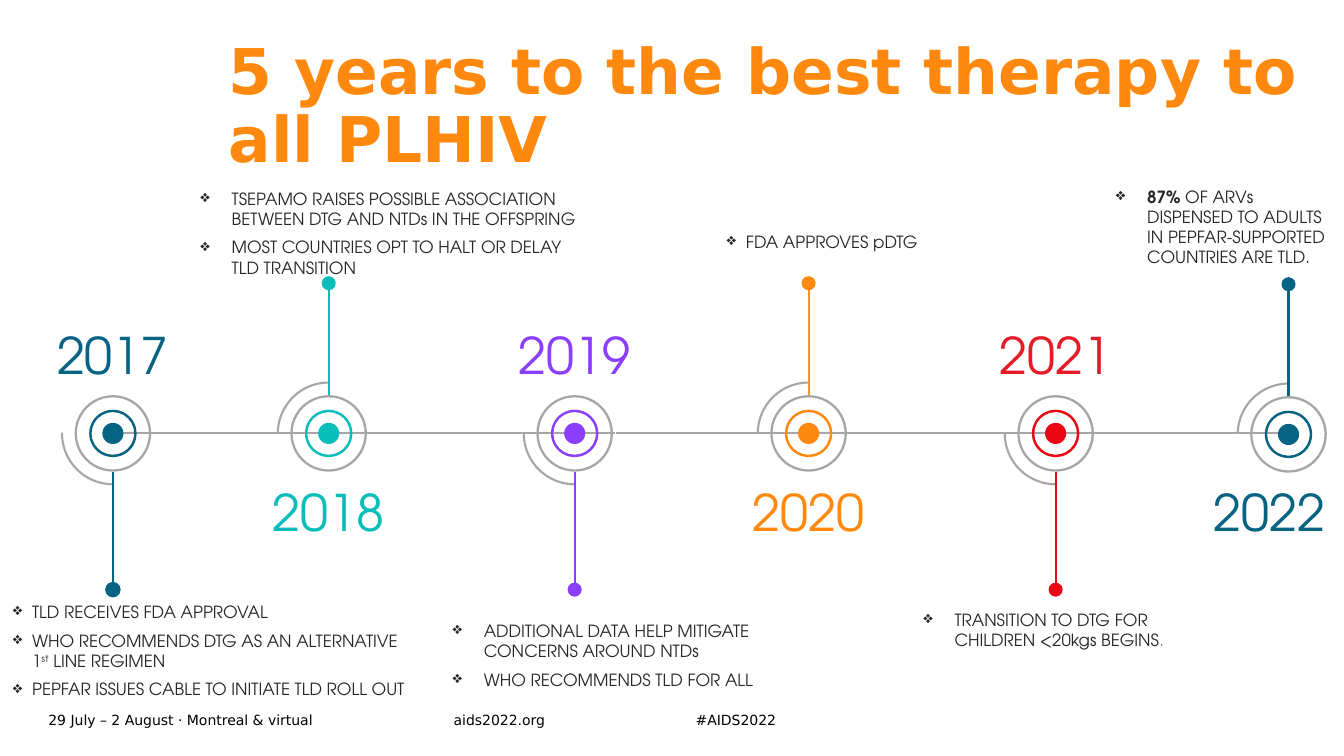
from dataclasses import dataclass
from typing import Optional

from lxml import etree
from pptx import Presentation
from pptx import util as u
from pptx.dml.color import RGBColor
from pptx.enum import shapes as sh, text as tx
from pptx.oxml.ns import qn

NAVY = RGBColor(0x07, 0x63, 0x82)
TEAL = RGBColor(0x08, 0xBD, 0xBA)
VIOLET = RGBColor(0x8A, 0x3F, 0xFC)
ORANGE = RGBColor(0xFF, 0x89, 0x0E)
AMBER = RGBColor(0xF7, 0x92, 0x28)
RED = RGBColor(0xEB, 0x06, 0x14)
CRIMSON = RGBColor(0xE7, 0x06, 0x13)
ROSE = RGBColor(0xE5, 0x1C, 0x28)
GREY = RGBColor(0xA6, 0xA6, 0xA6)
MID = RGBColor(0x80, 0x80, 0x80)
INK = RGBColor(0x26, 0x26, 0x26)
BLACK = RGBColor(0, 0, 0)
SANS = "DejaVu Sans"
GEO = "TeX Gyre Adventor"
AXIS = 4.3


@dataclass
class Part:
    text: str
    bold: Optional[bool] = None
    color: Optional[RGBColor] = None
    raised: bool = False


@dataclass
class Note:
    box: tuple[float, float, float, float]
    indent: float
    items: list[list[Part]]


@dataclass
class Stop:
    year: str
    x: float
    up: bool
    hue: RGBColor
    note: Note
    stem: Optional[RGBColor] = None
    label: Optional[RGBColor] = None
    mid: Optional[float] = None
    drop: float = 0
    edge: float = 0


STOPS = [
    Stop("2017", 1.12, False, NAVY, Note((0.03, 5.92, 4.12, 1.08), 0.19, [
        [Part("TLD RECEIVES FDA APPROVAL")],
        [Part("WHO RECOMMENDS DTG AS AN ALTERNATIVE 1"),
         Part("st", raised=True), Part(" LINE REGIMEN")],
        [Part("PEPFAR ISSUES CABLE TO INITIATE TLD ROLL OUT")]]), edge=1),
    Stop("2018", 3.26, True, TEAL, Note((1.89, 1.82, 4.04, 0.99), 0.31, [
        [Part("TSEPAMO RAISES POSSIBLE ASSOCIATION BETWEEN DTG AND NTDs "
              "IN THE OFFSPRING")],
        [Part("MOST COUNTRIES OPT TO HALT OR DELAY TLD TRANSITION")]])),
    Stop("2019", 5.7, False, VIOLET, Note((4.39, 6.11, 3.38, 0.79), 0.31, [
        [Part("ADDITIONAL DATA HELP MITIGATE CONCERNS AROUND NTDs")],
        [Part("WHO RECOMMENDS TLD FOR ALL")]])),
    Stop("2020", 8.02, True, ORANGE, Note((7.11, 2.25, 2.13, 0.3), 0.19, [
        [Part("FDA APPROVES pDTG")]]), stem=AMBER),
    Stop("2021", 10.47, False, RED, Note((9.06, 6, 2.94, 0.5), 0.31, [
        [Part("TRANSITION TO DTG FOR CHILDREN <20kgs BEGINS"),
         Part(".", color=MID)]]), stem=CRIMSON, label=ROSE),
    Stop("2022", 12.78, True, NAVY, Note((10.97, 1.8, 2.32, 0.91), 0.31, [
        [Part("87% ", bold=True),
         Part("OF ARVs DISPENSED TO ADULTS IN PEPFAR-SUPPORTED "
              "COUNTRIES ARE TLD.")]]), mid=12.59, drop=0.01),
]
SPANS = [(10.4, 12.87), (6.11, 8.57), (8.56, 11.02), (3.63, 6.1), (1.17, 3.63)]
FOOTS = [("29 July – 2 August · Montreal & virtual", 0.48, 4.02),
         ("aids2022.org", 4.5, 1.93), ("#AIDS2022", 6.9, 1.93)]


def style(para, face: str, size: float, color: RGBColor) -> None:
    para.font.name = face
    para.font.size = u.Pt(size)
    para.font.color.rgb = color


def strip(frame) -> None:
    frame.margin_left = frame.margin_right = 0
    frame.margin_top = frame.margin_bottom = 0


def frame(slide, x: float, y: float, w: float, h: float):
    box = slide.shapes.add_textbox(*map(u.Inches, (x, y, w, h)))
    box.text_frame.word_wrap = True
    return box.text_frame


def rule(slide, x1: float, y1: float, x2: float, y2: float,
         color: RGBColor) -> None:
    line = slide.shapes.add_connector(
        sh.MSO_CONNECTOR.STRAIGHT, *map(u.Inches, (x1, y1, x2, y2)))
    line.line.color.rgb = color
    line.line.width = u.Pt(1.5)
    etree.SubElement(line._element.spPr, qn("a:effectLst"))


def round_at(slide, kind, x: float, y: float, size: float,
             fill: Optional[RGBColor], adjust: tuple[float, ...] = (),
             line: Optional[RGBColor] = None, width: float = 0):
    part = slide.shapes.add_shape(kind, u.Inches(x - size / 2),
                                  u.Inches(y - size / 2),
                                  u.Inches(size), u.Inches(size))
    part.shadow.inherit = False
    for i, value in enumerate(adjust):
        part.adjustments[i] = value
    if fill is None:
        part.fill.background()
    else:
        part.fill.solid()
        part.fill.fore_color.rgb = fill
    if width:
        part.line.color.rgb = line
        part.line.width = u.Pt(width)
    else:
        part.line.fill.background()
    return part


def draw_note(slide, note: Note) -> None:
    body = frame(slide, *note.box)
    body.auto_size = tx.MSO_AUTO_SIZE.SHAPE_TO_FIT_TEXT
    for i, parts in enumerate(note.items):
        para = body.add_paragraph() if i else body.paragraphs[0]
        props = para._p.get_or_add_pPr()
        props.set("marL", str(u.Inches(note.indent)))
        props.set("indent", str(-u.Inches(note.indent)))
        etree.SubElement(props, qn("a:buChar")).set("char", "❖")
        if i:
            para.space_before = u.Pt(6)
        style(para, GEO, 12, INK)
        for part in parts:
            run = para.add_run()
            run.text = part.text
            if part.bold:
                run.font.bold = True
            if part.color is not None:
                run.font.color.rgb = part.color
            if part.raised:
                run._r.get_or_add_rPr().set("baseline", "30000")


def draw_stop(slide, stop: Stop) -> None:
    oval, donut = sh.MSO_SHAPE.OVAL, sh.MSO_SHAPE.DONUT
    x, y = stop.x, AXIS + stop.drop
    side = -1 if stop.up else 1
    arc = round_at(slide, sh.MSO_SHAPE.ARC, x, y, 1.01, None,
                   (54.2, 108.53), GREY, 1.5)
    arc.rotation = 90 if stop.up else 0
    round_at(slide, oval, x, y, 0.21, stop.hue)
    round_at(slide, donut, x, y, 0.47, stop.hue, (0.05,))
    round_at(slide, donut, x, y, 0.76, GREY, (0.03,))
    rule(slide, x, y + side * 1.51, x, y + side * 0.38, stop.stem or stop.hue)
    tip = y - 1.49 if stop.up else y + 1.55
    round_at(slide, oval, x, tip, 0.14, stop.hue, (), stop.hue, stop.edge)
    label = frame(slide, (stop.mid or x) - 0.83, 4.72 if stop.up else 3.17,
                  1.66, 0.71)
    label.auto_size = tx.MSO_AUTO_SIZE.SHAPE_TO_FIT_TEXT
    para = label.paragraphs[0]
    para.text = stop.year
    para.alignment = tx.PP_ALIGN.CENTER
    style(para, GEO, 36, stop.label or stop.hue)
    draw_note(slide, stop.note)


def draw_title(slide) -> None:
    title = slide.shapes.title
    title.left, title.top, title.width, title.height = map(
        u.Inches, (2.27, 0.4, 10.84, 1.34))
    body = title.text_frame
    strip(body)
    body.word_wrap = True
    body.auto_size = tx.MSO_AUTO_SIZE.NONE
    body.vertical_anchor = tx.MSO_ANCHOR.TOP
    para = body.paragraphs[0]
    para.text = "5 years to the best therapy to all PLHIV"
    para.alignment = tx.PP_ALIGN.LEFT
    para.line_spacing = 0.9
    style(para, SANS, 45, ORANGE)
    para.font.bold = True


def main() -> None:
    deck = Presentation()
    deck.slide_width, deck.slide_height = u.Inches(13.33), u.Inches(7.5)
    slide = deck.slides.add_slide(deck.slide_layouts[5])
    draw_title(slide)
    for words, x, w in FOOTS:
        foot = frame(slide, x, 7.02, w, 0.24)
        strip(foot)
        foot.vertical_anchor = tx.MSO_ANCHOR.MIDDLE
        foot.paragraphs[0].text = words
        style(foot.paragraphs[0], SANS, 10, BLACK)
    for start, end in SPANS:
        rule(slide, start, AXIS, end, AXIS, GREY)
    for stop in STOPS:
        draw_stop(slide, stop)
    deck.save("out.pptx")


if __name__ == "__main__":
    main()
